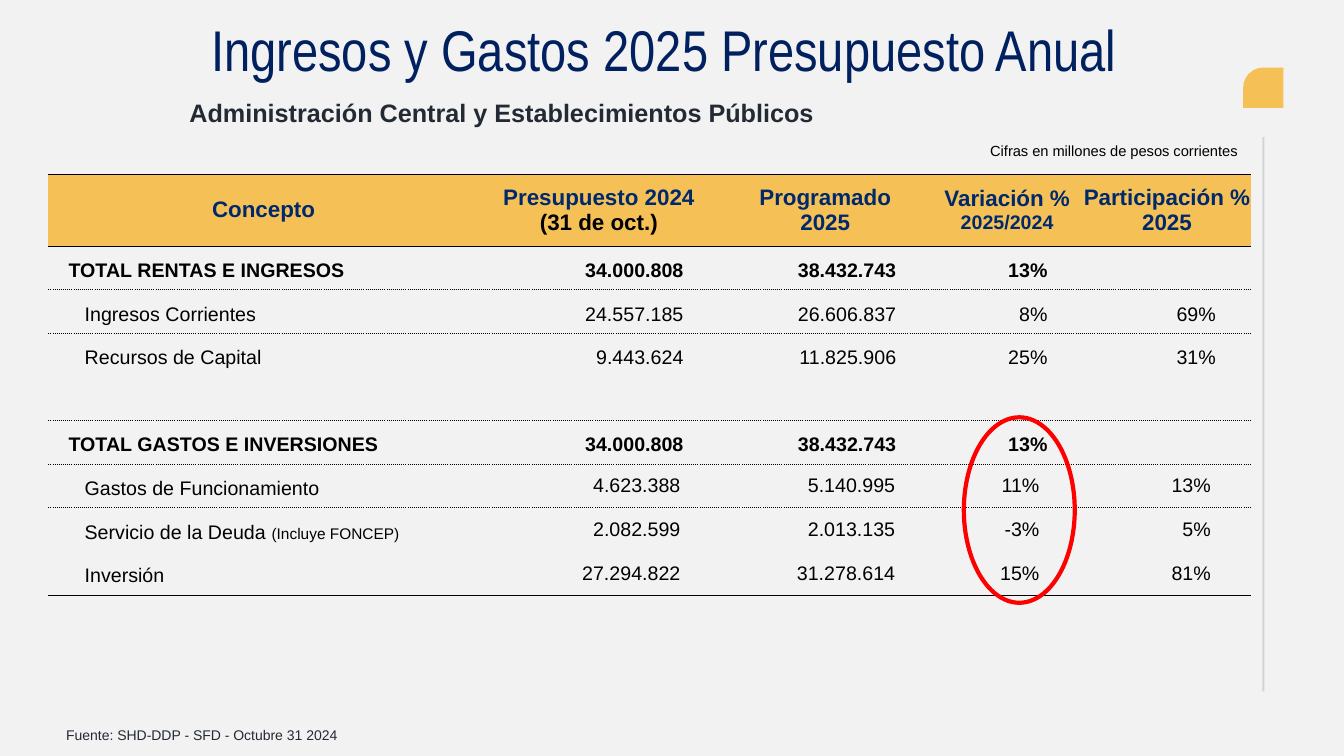
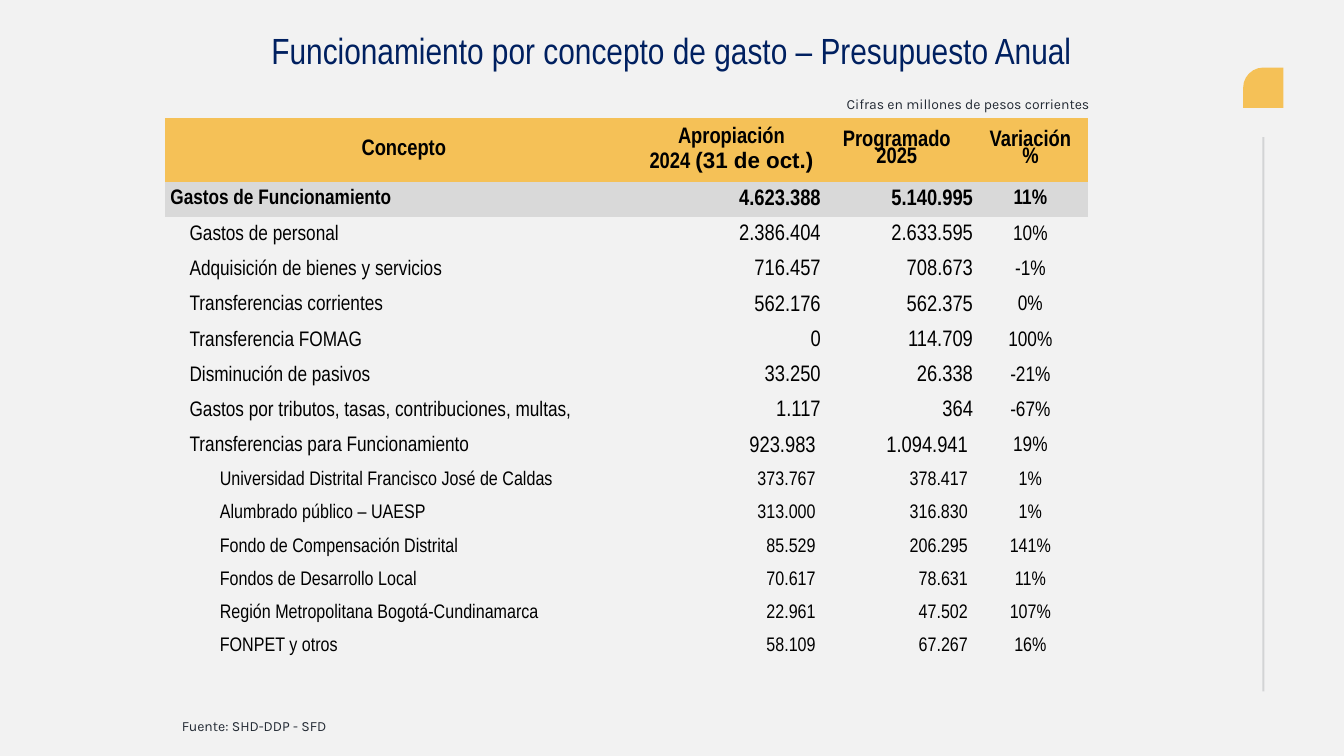
from dataclasses import dataclass, replace

from lxml import etree
from pptx import Presentation
from pptx.dml.color import RGBColor
from pptx.enum.shapes import MSO_CONNECTOR, MSO_SHAPE
from pptx.enum.text import MSO_ANCHOR as ANCHOR, PP_ALIGN as ALIGN
from pptx.oxml.ns import qn
from pptx.util import Inches, Pt

NAVY, HEADER_BLUE, INK, BLACK = "002060", "00296C", "232A34", "000000"
GOLD, PAPER, GREY, RED = "F5C157", "F2F2F2", "D9D9D9", "FF0000"
PLAIN_TABLE = "{2D5ABB26-0587-4C30-8999-92F81FD0307C}"
NARROW = "Arial Narrow"
UNITS_NOTE = "Cifras en millones de pesos corrientes"


@dataclass
class Style:
    size: float
    font: str = "Arial"
    color: str = BLACK
    bold: bool = False


def rgb(color):
    return RGBColor.from_string(color)


def write(para, spans, align=ALIGN.LEFT, spacing=None, indent=0):
    """Add (text, style) spans to a paragraph."""
    para.alignment = align
    if spacing:
        para.line_spacing = spacing
    if indent:
        para._p.get_or_add_pPr().set("marL", str(Inches(indent)))
    for text, style in spans:
        span = para.add_run()
        span.text = text
        span.font.size, span.font.name = Pt(style.size), style.font
        span.font.bold = style.bold
        span.font.color.rgb = rgb(style.color)


def add_text(page, area, text, style, align=ALIGN.CENTER, anchor=ANCHOR.TOP, spacing=None):
    frame = page.shapes.add_textbox(*map(Inches, area)).text_frame
    frame.word_wrap = True
    frame.vertical_anchor = anchor
    write(frame.paragraphs[0], [(text, style)], align, spacing)


def add_title(page, area, text, size):
    add_text(page, area, text, Style(size, NARROW, NAVY), anchor=ANCHOR.BOTTOM, spacing=0.9)


def add_page(deck):
    """Add a blank page with the gold tab and the vertical rule."""
    page = deck.slides.add_slide(deck.slide_layouts[6])
    tab = page.shapes.add_shape(MSO_SHAPE.ROUND_1_RECTANGLE,
                                *map(Inches, (12.33, 0.67, 0.4, 0.4)))
    tab.adjustments[0] = 0.5
    tab.rotation = 270
    tab.shadow.inherit = False
    tab.fill.solid()
    tab.fill.fore_color.rgb = rgb(GOLD)
    tab.line.fill.background()

    rule = page.shapes.add_connector(MSO_CONNECTOR.STRAIGHT,
                                     *map(Inches, (12.53, 1.36, 12.53, 6.86)))
    rule.line.width = Pt(1.5)
    rule.line.color.rgb = rgb(INK)
    properties = rule._element.spPr
    tint = next(properties.iter(qn("a:srgbClr")))
    etree.SubElement(tint, qn("a:alpha")).set("val", "15000")
    etree.SubElement(properties, qn("a:effectLst"))
    return page


def add_table(page, left, top, widths, heights):
    frame = page.shapes.add_table(len(heights), len(widths), Inches(left), Inches(top),
                                  Inches(sum(widths)), Inches(sum(heights)))
    table = frame.table
    table.first_row = table.horz_banding = False
    next(table._tbl.iter(qn("a:tableStyleId"))).text = PLAIN_TABLE
    for column, width in zip(table.columns, widths):
        column.width = Inches(width)
    for row, height in zip(table.rows, heights):
        row.height = Inches(height)
    for cell in table.iter_cells():
        cell.fill.background()
    return table


def fill_cell(cell, lines, align=ALIGN.CENTER, anchor=ANCHOR.MIDDLE,
              insets=(0, 0, 0, 0), spacing=None, indent=0):
    """Write lines of spans; insets run left, top, right, bottom."""
    (cell.margin_left, cell.margin_top,
     cell.margin_right, cell.margin_bottom) = map(Inches, insets)
    cell.vertical_anchor = anchor
    for number, spans in enumerate(lines):
        frame = cell.text_frame
        para = frame.add_paragraph() if number else frame.paragraphs[0]
        write(para, spans, align, spacing, indent)


def shade_row(table, row, color):
    for cell in table.rows[row].cells:
        cell.fill.solid()
        cell.fill.fore_color.rgb = rgb(color)


def rule_row(table, row, side, dash):
    """Draw a thin line along the top (lnT) or bottom (lnB) of a row."""
    for cell in table.rows[row].cells:
        edge = etree.Element(qn("a:" + side), w=str(Pt(0.5)))
        ink = etree.SubElement(edge, qn("a:solidFill"))
        etree.SubElement(ink, qn("a:srgbClr")).set("val", BLACK)
        etree.SubElement(edge, qn("a:prstDash")).set("val", dash)
        properties = cell._tc.get_or_add_tcPr()
        borders = [part for part in properties if part.tag == qn("a:lnT")]
        properties.insert(len(borders), edge)


def add_budget_table(page, left, top):
    head = Style(16, color=HEADER_BLUE, bold=True)
    body = Style(14)
    strong = replace(body, bold=True)
    headers = [
        [[("Concepto", head)]],
        [[("Presupuesto 2024", head)], [("(31 de oct.)", replace(head, color=BLACK))]],
        [[("Programado", head)], [("2025", head)]],
        [[("Variación %", head)], [("2025/2024", replace(head, size=14))]],
        [[("Participación %", head)], [("2025", head)]],
    ]
    rows = [
        ("TOTAL RENTAS E INGRESOS", "34.000.808", "38.432.743", "13%", ""),
        ("Ingresos Corrientes", "24.557.185", "26.606.837", "8%", "69%"),
        ("Recursos de Capital", "9.443.624", "11.825.906", "25%", "31%"),
        ("", "", "", "", ""),
        ("TOTAL GASTOS E INVERSIONES", "34.000.808", "38.432.743", "13%", ""),
        ("Gastos de Funcionamiento", "4.623.388", "5.140.995", "11%", "13%"),
        ("Servicio de la Deuda ", "2.082.599", "2.013.135", "-3%", "5%"),
        ("Inversión", "27.294.822", "31.278.614", "15%", "81%"),
    ]
    spending_margins = (0.38, 0.36, 0.43, 0.4)
    table = add_table(page, left, top, (4.27, 2.38, 2.11, 1.5, 1.67),
                      [0.71] + [0.43] * len(rows))
    for column, lines in enumerate(headers):
        fill_cell(table.cell(0, column), lines)
    for row, (label, *values) in enumerate(rows, 1):
        if not label:
            continue
        total = label.startswith("TOTAL")
        style = strong if total else body
        spans = [(label, style)]
        if label.startswith("Servicio"):
            spans.append(("(Incluye FONCEP)", Style(11)))
        low = {"anchor": ANCHOR.BOTTOM, "insets": (0.2, 0.12, 0.35, 0.08)}
        fill_cell(table.cell(row, 0), [spans], ALIGN.LEFT,
                  indent=0 if total else 0.16, **low)
        for column, value in enumerate(values, 1):
            if not value:
                continue
            place = low
            if row > 5:
                place = {"insets": (0, 0, spending_margins[column - 1], 0)}
            fill_cell(table.cell(row, column), [[(value, style)]], ALIGN.RIGHT, **place)
    shade_row(table, 0, GOLD)
    for total_row in (1, 5):
        shade_row(table, total_row, PAPER)
    rule_row(table, 0, "lnT", "solid")
    for row, dash in ((0, "solid"), (1, "sysDot"), (4, "sysDot"), (5, "sysDot"), (8, "solid")):
        rule_row(table, row, "lnB", dash)
        if row < 8:
            rule_row(table, row + 1, "lnT", dash)


def add_spending_table(page, left, top):
    head = Style(16, NARROW, bold=True)
    headers = [
        ([[("Concepto", head)]], None),
        ([[("Apropiación", head)],
          [("2024 ", head), ("(31 de oct.)", replace(head, font="Arial"))]], None),
        ([[("Programado", head)], [("2025", head)]], 0.8),
        ([[("Variación", head)], [("%", head)]], 0.8),
    ]
    rows = [
        ("Gastos de Funcionamiento", "4.623.388", "5.140.995", "11%"),
        ("Gastos de personal", "2.386.404", "2.633.595", "10%"),
        ("Adquisición de bienes y servicios", "716.457", "708.673", "-1%"),
        ("Transferencias corrientes", "562.176", "562.375", "0%"),
        ("Transferencia FOMAG", "0", "114.709", "100%"),
        ("Disminución de pasivos", "33.250", "26.338", "-21%"),
        ("Gastos por tributos, tasas, contribuciones, multas,", "1.117", "364", "-67%"),
        ("Transferencias para Funcionamiento", "923.983", "1.094.941", "19%"),
        ("Universidad Distrital Francisco José de Caldas", "373.767", "378.417", "1%"),
        ("Alumbrado público – UAESP", "313.000", "316.830", "1%"),
        ("Fondo de Compensación Distrital", "85.529", "206.295", "141%"),
        ("Fondos de Desarrollo Local", "70.617", "78.631", "11%"),
        ("Región Metropolitana Bogotá-Cundinamarca", "22.961", "47.502", "107%"),
        ("FONPET y otros", "58.109", "67.267", "16%"),
    ]
    main_count = 8
    table = add_table(page, left, top, (4.73, 1.77, 1.51, 1.14),
                      [0.63] + [0.35] * main_count + [0.33] * (len(rows) - main_count))
    for column, (lines, spacing) in enumerate(headers):
        fill_cell(table.cell(0, column), lines, insets=(0.05,) * 4, spacing=spacing)
    for row, (label, *amounts, change) in enumerate(rows, 1):
        detail = row > main_count
        style = Style(14 if detail else 15, NARROW, bold=row == 1)
        number = style if detail else replace(style, size=16)
        indent = 0.49 if detail else 0.19 if row > 1 else 0
        fill_cell(table.cell(row, 0), [[(label, style)]], ALIGN.LEFT,
                  insets=(0.05, 0, 0.05, 0), indent=indent)
        margin = 0.05 if row >= main_count else 0
        for column, amount in enumerate(amounts, 1):
            fill_cell(table.cell(row, column), [[(amount, number)]], ALIGN.RIGHT,
                      insets=(0, 0, margin, 0))
        fill_cell(table.cell(row, 3), [[(change, style)]])
    shade_row(table, 0, GOLD)
    shade_row(table, 1, GREY)


def add_highlight(page, area):
    ring = page.shapes.add_shape(MSO_SHAPE.OVAL, *map(Inches, area))
    ring.shadow.inherit = False
    ring.fill.background()
    ring.line.color.rgb = rgb(RED)
    ring.line.width = Pt(3)


def build_budget_page(deck):
    page = add_page(deck)
    add_text(page, (0.09, 7.16, 3.82, 0.27), "Fuente: SHD-DDP - SFD - Octubre 31 2024",
             Style(10, color=INK))
    add_text(page, (1.78, 0.92, 6.67, 0.4), "Administración Central y Establecimientos Públicos",
             Style(18, color=INK, bold=True), ALIGN.LEFT)
    add_text(page, (9.56, 1.36, 2.98, 0.28), UNITS_NOTE, Style(10.5))
    add_budget_table(page, 0.48, 1.73)
    add_title(page, (0.84, 0.27, 11.5, 0.61), "Ingresos y Gastos 2025 Presupuesto Anual", 41)
    add_highlight(page, (9.56, 4.14, 1.1, 1.84))


def build_spending_page(deck):
    page = add_page(deck)
    note = Style(10, "Karla", INK)
    add_title(page, (1.71, 0.4, 9.91, 0.37),
              "Funcionamiento por concepto de gasto – Presupuesto Anual", 26)
    add_text(page, (8.22, 0.9, 2.76, 0.27), UNITS_NOTE, note)
    add_text(page, (1.64, 7.07, 1.76, 0.27), "Fuente: SHD-DDP - SFD", note)
    add_spending_table(page, 1.64, 1.17)


def main():
    deck = Presentation()
    deck.slide_width, deck.slide_height = Inches(13.33), Inches(7.5)
    backdrop = deck.slide_master.background.fill
    backdrop.solid()
    backdrop.fore_color.rgb = rgb(PAPER)
    build_budget_page(deck)
    build_spending_page(deck)
    deck.save("out.pptx")


if __name__ == "__main__":
    main()
